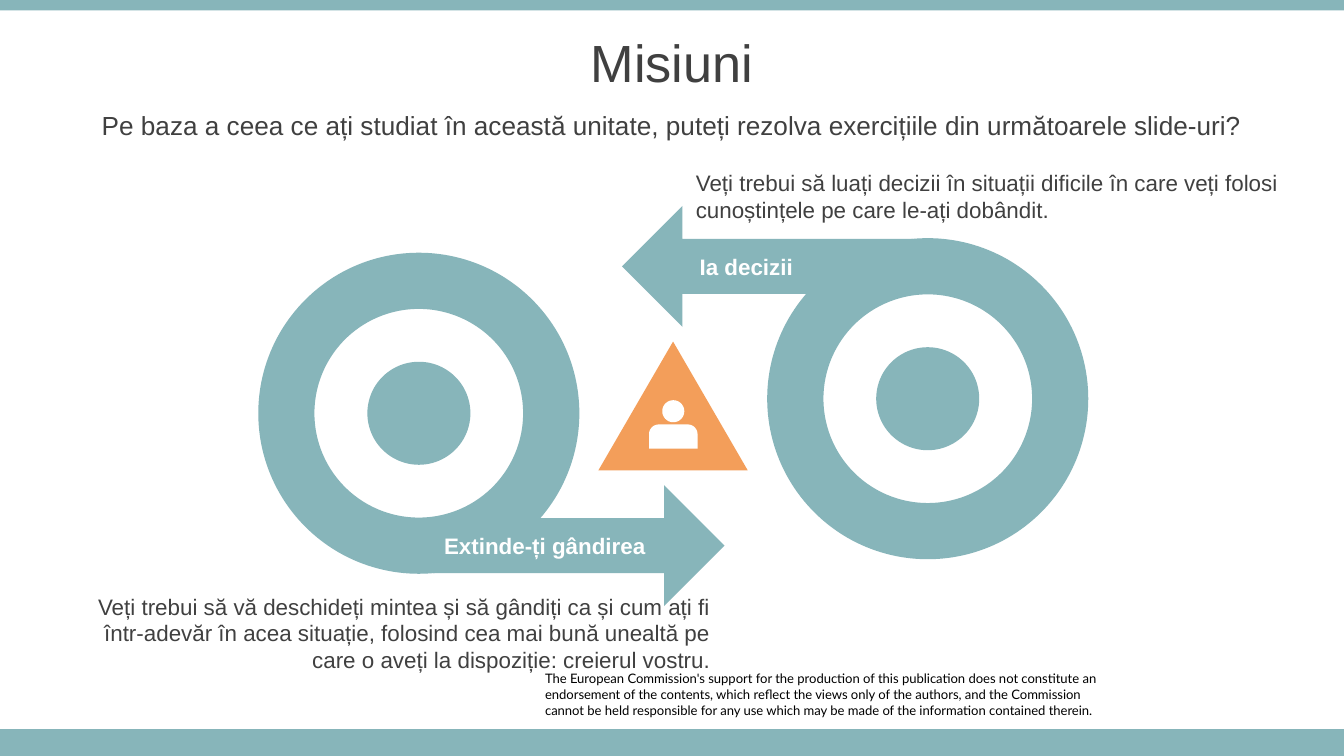
import math

from pptx import Presentation
from pptx import util as u
from pptx.dml.color import RGBColor
from pptx.enum import shapes, text

TEAL, ORANGE, WHITE = "87B5BA", "F39E5A", "FFFFFF"
DARK, BLACK = "404040", "000000"
SLIDE_WIDTH, SLIDE_HEIGHT = 720, 405
RING_SIZE, HUB_SIZE = 172, 55.2
ARROW_WIDTH, ARROW_HEIGHT = 156.2, 64.8
ARROW_OFFSET = (93.6, 124.5)

LEFT = text.PP_ALIGN.LEFT
CENTER = text.PP_ALIGN.CENTER
RIGHT = text.PP_ALIGN.RIGHT
SHAPE = shapes.MSO_SHAPE


def colour(value):
    return RGBColor.from_string(value)


def paint(shape, fill):
    shape.shadow.inherit = False
    shape.fill.solid()
    shape.fill.fore_color.rgb = colour(fill)
    shape.line.fill.background()


def add_filled(slide, kind, box, fill, adjustments=(), rotation=0):
    shape = slide.shapes.add_shape(kind, *map(u.Pt, box))
    for index, value in enumerate(adjustments):
        shape.adjustments[index] = value
    shape.rotation = rotation
    paint(shape, fill)


def write(frame, *lines, size=12, font="Arial", color=DARK, bold=False,
          align=LEFT, anchor=text.MSO_ANCHOR.TOP, margin=None):
    """Fill a text frame with one paragraph per line."""
    frame.word_wrap = True
    frame.auto_size = text.MSO_AUTO_SIZE.NONE
    frame.vertical_anchor = anchor
    if margin is not None:
        frame.margin_left = frame.margin_right = u.Pt(margin)
        frame.margin_top = frame.margin_bottom = u.Pt(margin)
    for index, line in enumerate(lines):
        paragraph = frame.add_paragraph() if index else frame.paragraphs[0]
        paragraph.alignment = align
        paragraph.space_before = u.Pt(0)
        run = paragraph.add_run()
        run.text = line
        run.font.size = u.Pt(size)
        run.font.name = font
        run.font.bold = bold
        run.font.color.rgb = colour(color)


def add_text(slide, box, *lines, **style):
    write(slide.shapes.add_textbox(*map(u.Pt, box)).text_frame, *lines, **style)


def fill_placeholder(placeholder, box, line, size):
    placeholder.left, placeholder.top, placeholder.width, placeholder.height = map(u.Pt, box)
    write(placeholder.text_frame, line, size=size, align=CENTER,
          anchor=text.MSO_ANCHOR.MIDDLE)


def add_loop(slide, left, top, turned=False):
    """Draw a ring with its hub and tangent arrow; turned rotates all by 180 degrees."""
    rotation = 180 if turned else 0
    dx, dy = ARROW_OFFSET
    if turned:
        dx, dy = RING_SIZE - dx - ARROW_WIDTH, RING_SIZE - dy - ARROW_HEIGHT
    inset = (RING_SIZE - HUB_SIZE) / 2
    add_filled(slide, SHAPE.DONUT, (left, top, RING_SIZE, RING_SIZE), TEAL,
               [0.175], rotation)
    add_filled(slide, SHAPE.RIGHT_ARROW,
               (left + dx, top + dy, ARROW_WIDTH, ARROW_HEIGHT), TEAL,
               [0.455, 0.5], rotation)
    add_filled(slide, SHAPE.OVAL, (left + inset, top + inset, HUB_SIZE, HUB_SIZE), TEAL)


def arc(x, y, radius, start, end):
    """Return points along an arc, clockwise on the slide, angles in degrees."""
    steps = max(8, (end - start) // 6)
    angles = [math.radians(start + (end - start) * i / steps) for i in range(steps + 1)]
    return [(u.Pt(x + radius * math.cos(a)), u.Pt(y + radius * math.sin(a)))
            for a in angles]


def add_person(slide, left, top, width=26, height=26):
    right, bottom = left + width, top + height
    shoulder, radius, head = top + height / 2, 5.2, 5.9
    body = (arc(left + radius, shoulder + radius, radius, 180, 270)
            + arc(right - radius, shoulder + radius, radius, 270, 360)
            + [(u.Pt(right), u.Pt(bottom)), (u.Pt(left), u.Pt(bottom))])
    face = arc(left + width / 2, top + head, head, 0, 360)
    builder = slide.shapes.build_freeform(*body[0])
    builder.add_line_segments(body[1:], close=True)
    builder.move_to(*face[0])
    builder.add_line_segments(face[1:], close=True)
    paint(builder.convert_to_shape(), WHITE)


def main():
    presentation = Presentation()
    presentation.slide_width = u.Pt(SLIDE_WIDTH)
    presentation.slide_height = u.Pt(SLIDE_HEIGHT)
    slide = presentation.slides.add_slide(presentation.slide_layouts[0])

    add_text(slide, (292, 359.3, 300, 25.2),
             "The European Commission's support for the production of this publication "
             "does not constitute an endorsement of the contents, which reflect the views "
             "only of the authors, and the Commission",
             "cannot be held responsible for any use which may be made of the information "
             "contained therein.",
             size=7, font="Lato", color=BLACK, margin=0)
    add_filled(slide, SHAPE.RECTANGLE, (0, 390.7, SLIDE_WIDTH, 14.3), TEAL)
    add_filled(slide, SHAPE.RECTANGLE, (0, 0, SLIDE_WIDTH, 5.6), TEAL)

    fill_placeholder(slide.shapes.title, (0, 10.4, SLIDE_WIDTH, 45.4), "Misiuni", 28)
    fill_placeholder(slide.placeholders[1], (0, 55.8, SLIDE_WIDTH, 22.7),
                     "Pe baza a ceea ce ați studiat în această unitate, puteți rezolva "
                     "exercițiile din următoarele slide-uri?", 14)

    add_loop(slide, 138.4, 135.4)
    add_loop(slide, 411, 127.6, turned=True)
    add_filled(slide, SHAPE.ISOSCELES_TRIANGLE, (320.6, 183, 80, 69), ORANGE)
    add_person(slide, 347.7, 214.4)

    add_text(slide, (365.7, 87.1, 340, 36),
             "Veți trebui să luați decizii în situații dificile în care veți folosi "
             "cunoștințele pe care le-ați dobândit.")
    add_text(slide, (30, 314, 357.8, 51),
             "Veți trebui să vă deschideți mintea și să gândiți ca și cum ați fi "
             "într-adevăr în acea situație, folosind cea mai bună unealtă pe care o aveți "
             "la dispoziție: creierul vostru.", align=RIGHT)
    add_text(slide, (169, 281.6, 184, 21.6), "Extinde-ți gândirea",
             color=WHITE, bold=True, align=RIGHT)
    add_text(slide, (367.7, 132, 184, 21.6), "Ia decizii", color=WHITE, bold=True)

    presentation.save("out.pptx")


if __name__ == "__main__":
    main()
